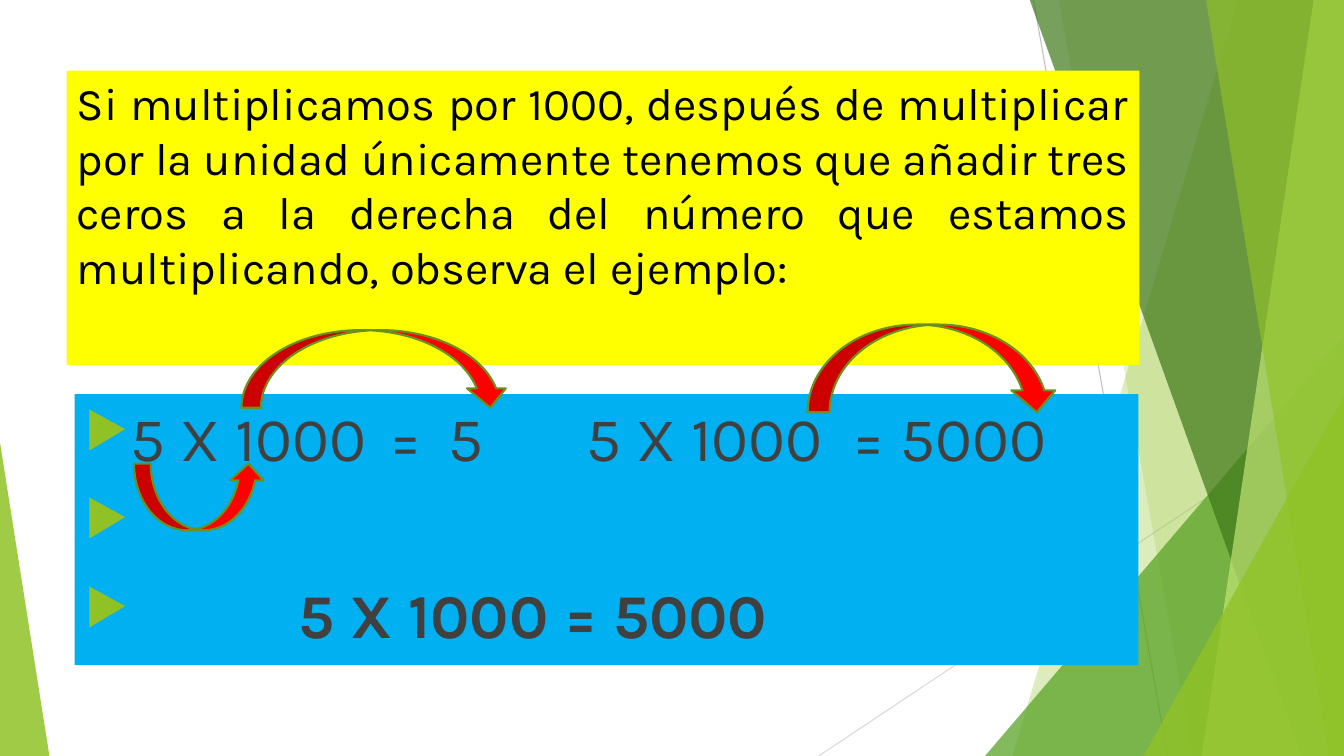
from lxml import etree
from pptx import Presentation
from pptx.dml.color import RGBColor
from pptx.enum.shapes import MSO_CONNECTOR, MSO_SHAPE
from pptx.enum.text import MSO_ANCHOR, MSO_AUTO_SIZE, PP_ALIGN
from pptx.oxml.ns import qn
from pptx.util import Inches, Pt

LINE = MSO_CONNECTOR.STRAIGHT
RECT = MSO_SHAPE.RECTANGLE
WEDGE = MSO_SHAPE.ISOSCELES_TRIANGLE
CURVE = MSO_SHAPE.CURVED_RIGHT_ARROW
TOP = MSO_ANCHOR.TOP
FIXED = MSO_AUTO_SIZE.NONE
LEFT = PP_ALIGN.LEFT
JUSTIFY = PP_ALIGN.JUSTIFY
WIDE, HIGH = 13.33, 7.5


def color(code):
    """Turn a hex string into a colour."""
    return RGBColor.from_string(code)


def add(parent, tag, **attrs):
    """Append a drawing element with its attributes."""
    node = etree.SubElement(parent, qn(tag))
    for key, value in attrs.items():
        node.set(key, str(value))
    return node


class Board:
    """Hold the style and the current slide."""

    font = "Karla"
    lime = "90C226"

    def __init__(self, deck):
        """Add a title-only slide to the deck."""
        self.slide = deck.slides.add_slide(deck.slide_layouts[5])
        self.shapes = self.slide.shapes

    def paint(self, shape, fill, alpha=100):
        """Give a shape a plain fill without line or shadow."""
        shape.shadow.inherit = False
        shape.fill.solid()
        shape.fill.fore_color.rgb = color(fill)
        shape.line.fill.background()
        if alpha < 100:
            tint = shape.fill._xPr.find(qn("a:solidFill"))[0]
            add(tint, "a:alpha", val=alpha * 1000)

    def line(self, x1, y1, x2, y2, tone):
        """Draw a thin straight line."""
        line = self.shapes.add_connector(
            LINE, Inches(x1), Inches(y1), Inches(x2), Inches(y2))
        line.line.color.rgb = color(tone)
        line.line.width = Pt(0.75)
        add(line._element.spPr, "a:effectLst")

    def facet(self, top, base, fill, alpha):
        """Draw a slanted panel that reaches the right edge."""
        pen = self.shapes.build_freeform(Inches(top), Inches(-0.01))
        ends = [(WIDE, -0.01), (WIDE, HIGH), (base, HIGH)]
        pen.add_line_segments([(Inches(x), Inches(y)) for x, y in ends])
        self.paint(pen.convert_to_shape(), fill, alpha)

    def shape(self, kind, x, y, w, h, fill, alpha=100):
        """Draw a filled preset shape."""
        shape = self.shapes.add_shape(
            kind, Inches(x), Inches(y), Inches(w), Inches(h))
        self.paint(shape, fill, alpha)
        return shape

    def wedge(self, x, y, w, peak, fill, alpha):
        """Draw a corner triangle that stands on the bottom edge."""
        wedge = self.shape(WEDGE, x, y, w, HIGH - y, fill, alpha)
        wedge.adjustments[0] = peak

    def style(self, para, size, tone, bold=False):
        """Set the font of a paragraph."""
        para.font.name = self.font
        para.font.size = Pt(size)
        para.font.bold = bold
        para.font.color.rgb = color(tone)

    def frame(self, shape):
        """Prepare the text frame of a shape."""
        frame = shape.text_frame
        frame.word_wrap = True
        frame.auto_size = FIXED
        frame.vertical_anchor = TOP
        return frame

    def title(self, text, x, y, w, h, fill):
        """Place the title in front of the panels."""
        title = self.shapes.title
        self.shapes._spTree.append(title._element)
        title.left, title.top = Inches(x), Inches(y)
        title.width, title.height = Inches(w), Inches(h)
        title.fill.solid()
        title.fill.fore_color.rgb = color(fill)
        frame = self.frame(title)
        frame.text = text
        para = frame.paragraphs[0]
        para.alignment = JUSTIFY
        self.style(para, 32.4, "000000")

    def bullets(self, rows, x, y, w, h, fill):
        """Write bulleted rows of text, tab stops and weight in a box."""
        frame = self.frame(self.shape(RECT, x, y, w, h, fill))
        for i, (text, stops, bold) in enumerate(rows):
            para = frame.add_paragraph() if i else frame.paragraphs[0]
            para.text = text
            para.alignment = LEFT
            para.space_before = Pt(10 if i else 0)
            props = para._p.get_or_add_pPr()
            props.set("marL", str(Inches(0.38)))
            props.set("indent", str(Inches(-0.38)))
            add(add(props, "a:buClr"), "a:srgbClr", val=self.lime)
            add(props, "a:buSzPct", val=80000)
            add(props, "a:buChar", char="▶")
            tabs = add(props, "a:tabLst")
            for stop in stops:
                add(tabs, "a:tab", pos=Inches(stop), algn="l")
            self.style(para, 44.4, "404040", bold)

    def arrow(self, x, y, w, h, flip):
        """Draw a curved arrow turned on its side."""
        arrow = self.shape(CURVE, x, y, w, h, "FF0000")
        arrow.line.color.rgb = color("6B901C")
        arrow.line.width = Pt(1.5)
        arrow.rotation = 270
        if flip:
            arrow._element.spPr.xfrm.set("flipH", "1")


def main():
    """Build the slide and save it."""
    deck = Presentation()
    deck.slide_width, deck.slide_height = Inches(WIDE), Inches(HIGH)
    board = Board(deck)
    lime = board.lime

    board.line(10.25, 0, 11.58, HIGH, "BFBFBF")
    board.line(WIDE, 4.03, 8.12, HIGH, "D9D9D9")
    board.facet(12.28, 10.04, lime, 30)
    board.facet(10.5, 11.83, lime, 20)
    board.wedge(9.77, 3.33, 3.56, 1, "54A021", 72)
    board.facet(10.21, 12.91, "3F7819", 70)
    board.facet(13.03, 11.92, "C0E474", 70)
    board.facet(11.96, 13.18, lime, 65)
    board.wedge(11.34, 3.93, 1.99, 1, lime, 80)
    board.wedge(0, 4.39, 0.49, 0, lime, 85)

    board.title(
        "Si multiplicamos por 1000, después de multiplicar por la unidad "
        "únicamente tenemos que añadir tres ceros a la derecha del número "
        "que estamos multiplicando, observa el ejemplo:",
        0.66, 0.7, 10.64, 2.92, "FFFF00")
    board.bullets([
        ("5 X 1000\t=\t5\t5 X 1000\t= 5000", [3.02, 3.61, 4.98, 7.62], False),
        (" ", [], False),
        ("\t5 X 1000 = 5000", [2.12], True),
    ], 0.74, 3.91, 10.55, 2.69, "00B0F0")

    board.arrow(1.65, 4.28, 0.66, 1.3, False)
    board.arrow(3.34, 2.33, 0.77, 2.66, True)
    board.arrow(8.82, 2.41, 0.87, 2.49, True)
    deck.save("out.pptx")


if __name__ == "__main__":
    main()
